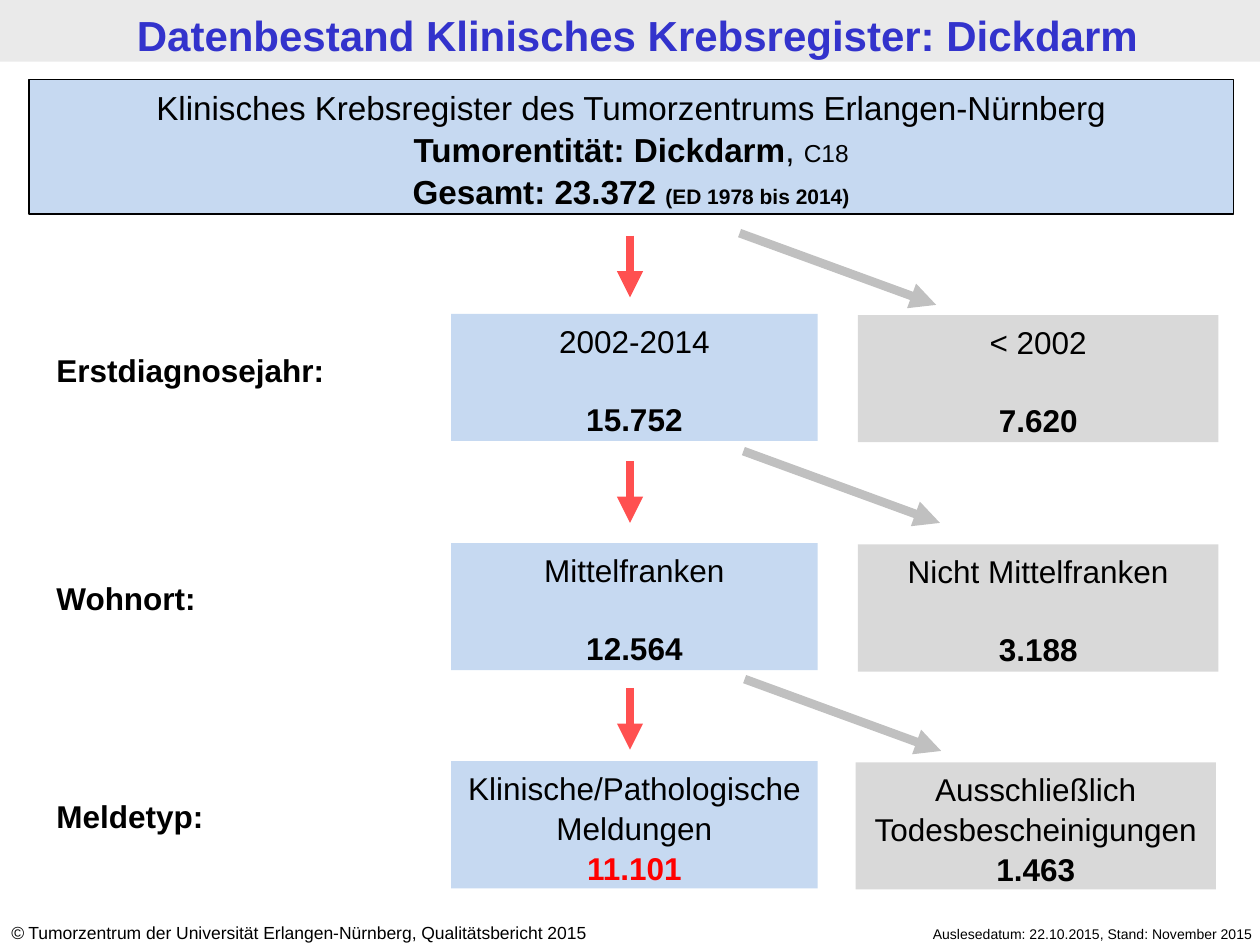
import pptx
import pptx.util
import pptx.dml.color
import pptx.enum.shapes
import pptx.enum.text
import pptx.oxml.ns
import lxml.etree

Inches = pptx.util.Inches
Pt = pptx.util.Pt
RGBColor = pptx.dml.color.RGBColor
ALIGN = pptx.enum.text.PP_ALIGN

BLACK = RGBColor(0x00, 0x00, 0x00)
BLUE = RGBColor(0xC6, 0xD9, 0xF1)
GREY = RGBColor(0xD9, 0xD9, 0xD9)
BAND = RGBColor(0xEA, 0xEA, 0xEA)
TITLE = RGBColor(0x33, 0x33, 0xCC)
RED = RGBColor(0xFF, 0x00, 0x00)
ARROW_RED = RGBColor(0xFF, 0x50, 0x50)
ARROW_GREY = RGBColor(0xC0, 0xC0, 0xC0)

LINE_SPACING = 1.05
EMPTY_LINE = 21.7
BOX_HEIGHT = 1.01

STEPS = [
    {"label": "Erstdiagnosejahr:", "label_top": 2.72, "top": 2.49, "excluded_left": 6.81,
     "kept": ("2002-2014", "15.752"), "excluded": ("< 2002", "7.620"),
     "gap": EMPTY_LINE, "color": BLACK, "arrow_top": 1.87, "branch": (5.87, 1.85)},
    {"label": "Wohnort:", "label_top": 4.53, "top": 4.31, "excluded_left": 6.81,
     "kept": ("Mittelfranken", "12.564"), "excluded": ("Nicht Mittelfranken", "3.188"),
     "gap": EMPTY_LINE, "color": BLACK, "arrow_top": 3.66, "branch": (5.9, 3.58)},
    {"label": "Meldetyp:", "label_top": 6.26, "top": 6.04, "excluded_left": 6.79,
     "kept": ("Klinische/Pathologische Meldungen", "11.101"),
     "excluded": ("Ausschließlich Todesbescheinigungen", "1.463"),
     "gap": 0, "color": RED, "arrow_top": 5.46, "branch": (5.91, 5.39)},
]


def write_text(shape, paragraphs, alignment, gap=0):
    frame = shape.text_frame
    frame.word_wrap = True
    frame.vertical_anchor = pptx.enum.text.MSO_ANCHOR.TOP
    for index, runs in enumerate(paragraphs):
        paragraph = frame.add_paragraph() if index else frame.paragraphs[0]
        paragraph.alignment = alignment
        paragraph.line_spacing = LINE_SPACING
        if index and gap:
            paragraph.space_before = Pt(gap)
        for text, size, formats in runs:
            run = paragraph.add_run()
            run.text = text
            values = {"name": "Arial", "size": Pt(size), "color": BLACK} | formats
            run.font.color.rgb = values.pop("color")
            for attribute, value in values.items():
                setattr(run.font, attribute, value)


def add_box(slide, position, fill, outline=None):
    shape = slide.shapes.add_shape(
        pptx.enum.shapes.MSO_SHAPE.RECTANGLE, *map(Inches, position))
    shape.shadow.inherit = False
    shape.fill.solid()
    shape.fill.fore_color.rgb = fill
    if outline is None:
        shape.line.fill.background()
    else:
        shape.line.color.rgb = outline
        shape.line.width = Pt(0.75)
    return shape


def add_text(slide, position, runs, alignment=ALIGN.LEFT):
    shape = slide.shapes.add_textbox(*map(Inches, position))
    write_text(shape, [runs], alignment)


def add_arrow(slide, start, end, color):
    connector = slide.shapes.add_connector(
        pptx.enum.shapes.MSO_CONNECTOR.STRAIGHT, *map(Inches, (*start, *end)))
    connector.line.color.rgb = color
    connector.line.width = Pt(5)
    qualified = pptx.oxml.ns.qn
    line = connector.line._get_or_add_ln()
    lxml.etree.SubElement(line, qualified("a:tailEnd"), type="triangle")
    lxml.etree.SubElement(connector._element.spPr, qualified("a:effectLst"))


def add_count_box(slide, position, fill, content, gap, color):
    name, count = content
    shape = add_box(slide, position, fill)
    paragraphs = [[(name, 18, {})], [(count, 18, {"bold": True, "color": color})]]
    write_text(shape, paragraphs, ALIGN.CENTER, gap)


def add_step(slide, step):
    top, gap = step["top"], step["gap"]
    add_text(slide, (0.35, step["label_top"], 2.76, 0.4),
             [(step["label"], 18, {"bold": True})])
    add_count_box(slide, (3.58, top, 2.91, BOX_HEIGHT), BLUE,
                  step["kept"], gap, step["color"])
    add_count_box(slide, (step["excluded_left"], top + 0.01, 2.86, BOX_HEIGHT), GREY,
                  step["excluded"], gap, BLACK)
    add_arrow(slide, (5, step["arrow_top"]), (5, step["arrow_top"] + 0.49), ARROW_RED)
    left, branch_top = step["branch"]
    add_arrow(slide, (left, branch_top), (left + 1.56, branch_top + 0.57), ARROW_GREY)


def add_header(slide):
    add_box(slide, (0, 0, 10, 0.49), BAND)
    add_text(slide, (0.06, 0.01, 10, 0.49),
             [("Datenbestand Klinisches Krebsregister: Dickdarm", 24,
               {"bold": True, "color": TITLE})], ALIGN.CENTER)
    shape = add_box(slide, (0.23, 0.63, 9.56, 1.07), BLUE, BLACK)
    write_text(shape, [
        [("Klinisches Krebsregister des Tumorzentrums Erlangen-Nürnberg", 19, {})],
        [("Tumorentität: Dickdarm", 19, {"bold": True}), (", ", 19, {}), ("C18", 14, {})],
        [("Gesamt: 23.372 ", 19, {"bold": True}),
         ("(ED 1978 bis 2014)", 12, {"bold": True})],
    ], ALIGN.CENTER)


def add_footer(slide):
    add_text(slide, (6.65, 7.29, 3.39, 0.24),
             [("Auslesedatum: 22.10.2015, Stand: November 2015", 8, {})], ALIGN.RIGHT)
    add_text(slide, (-0.01, 7.26, 5.24, 0.27),
             [("©", 10, {"italic": True}),
              (" Tumorzentrum der Universität Erlangen-Nürnberg, Qualitätsbericht 2015",
               10, {})])


def main():
    presentation = pptx.Presentation()
    presentation.slide_width = Inches(10)
    presentation.slide_height = Inches(7.5)
    slide = presentation.slides.add_slide(presentation.slide_layouts[6])
    add_header(slide)
    for step in STEPS:
        add_step(slide, step)
    add_footer(slide)
    presentation.save("out.pptx")


if __name__ == "__main__":
    main()
